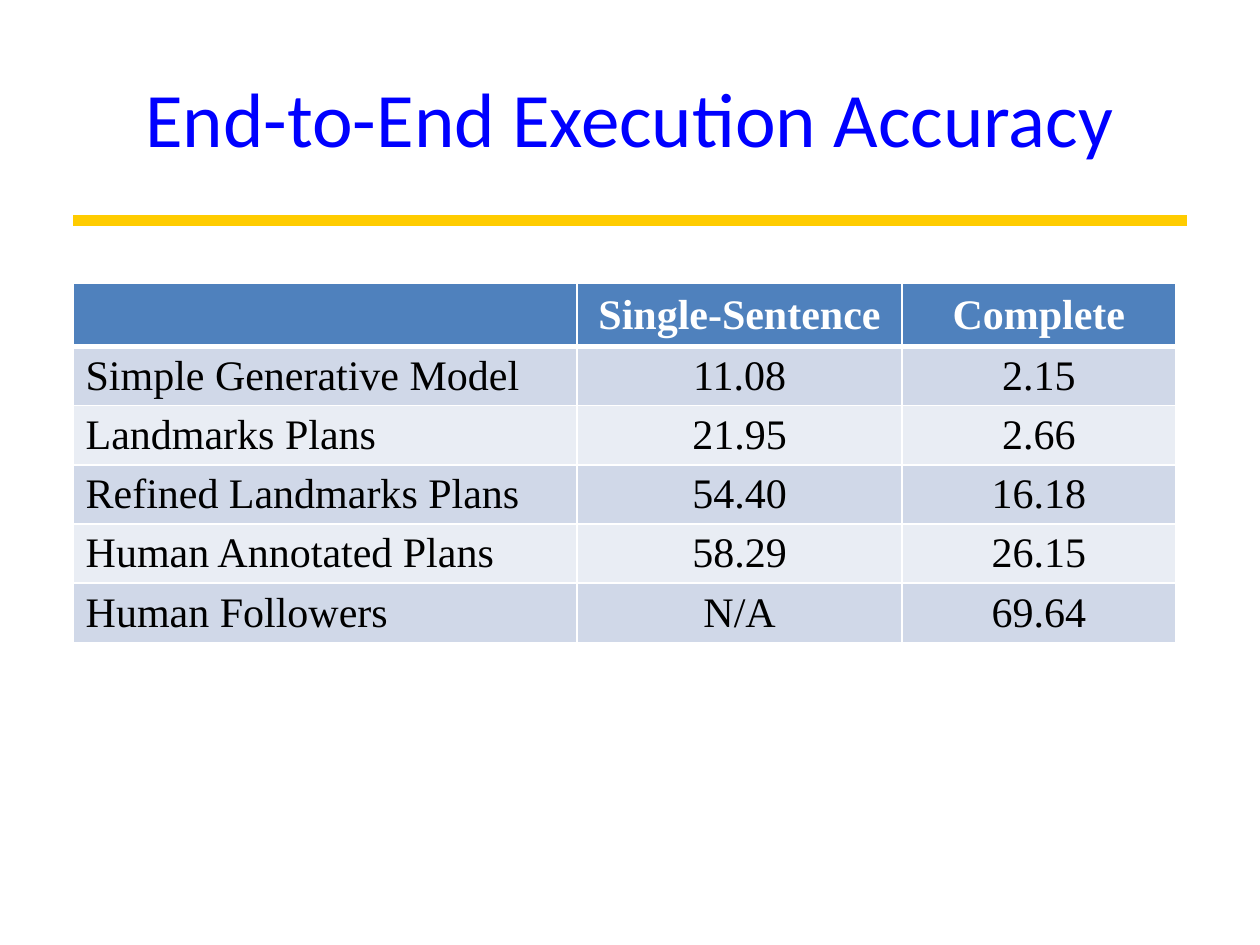
from pptx import Presentation
from pptx.dml.color import RGBColor
from pptx.enum.shapes import MSO_CONNECTOR
from pptx.enum.text import MSO_ANCHOR, PP_ALIGN
from pptx.oxml.ns import qn
from pptx.util import Inches, Pt
from lxml.etree import SubElement

TITLE = "End-to-End Execution Accuracy"
ROWS = [
    ("", "Single-Sentence", "Complete"),
    ("Simple Generative Model", "11.08", "2.15"),
    ("Landmarks Plans", "21.95", "2.66"),
    ("Refined Landmarks Plans", "54.40", "16.18"),
    ("Human Annotated Plans", "58.29", "26.15"),
    ("Human Followers", "N/A", "69.64"),
]
COLUMN_WIDTHS = (4, 2.58, 2.17)
HEADER_HEIGHT, ROW_HEIGHT = 0.5, 0.47
LEFT, RIGHT = 0.58, 9.42
COLORS = {
    "title": "0000FF", "rule": "FFCC00", "header": "4F81BD",
    "odd": "D0D8E8", "even": "E9EDF4", "white": "FFFFFF", "text": "000000",
}


def color(name):
    return RGBColor.from_string(COLORS[name])


def write(frame, text, *, size, font, fill, bold=False, align=PP_ALIGN.CENTER):
    paragraph = frame.paragraphs[0]
    paragraph.alignment = align
    span = paragraph.add_run()
    span.text = text
    span.font.size, span.font.name, span.font.bold = Pt(size), font, bold
    span.font.color.rgb = color(fill)


def set_borders(cell, widths):
    """Draw white borders; widths maps each side's tag to points."""
    properties = cell._tc.get_or_add_tcPr()
    for position, (side, width) in enumerate(widths.items()):
        line = properties.makeelement(qn(f"a:{side}"), {"w": str(Pt(width))})
        fill = SubElement(line, qn("a:solidFill"))
        SubElement(fill, qn("a:srgbClr"), val=COLORS["white"])
        properties.insert(position, line)


def add_title(page):
    box = page.shapes.title
    box.left, box.top = Inches(0.5), Inches(0.3)
    box.width, box.height = Inches(9), Inches(1.25)
    box.text_frame.vertical_anchor = MSO_ANCHOR.MIDDLE
    write(box.text_frame, TITLE, size=44, font="Calibri", fill="title")


def add_rule(page):
    rule = page.shapes.add_connector(
        MSO_CONNECTOR.STRAIGHT, Inches(LEFT), Inches(1.75), Inches(RIGHT), Inches(1.75))
    rule.line.color.rgb = color("rule")
    rule.line.width = Pt(6)
    SubElement(rule._element.spPr, qn("a:effectLst"))


def add_accuracy_table(page):
    heights = [HEADER_HEIGHT] + [ROW_HEIGHT] * (len(ROWS) - 1)
    table = page.shapes.add_table(
        len(ROWS), len(COLUMN_WIDTHS), Inches(LEFT), Inches(2.25),
        Inches(sum(COLUMN_WIDTHS)), Inches(sum(heights))).table
    for column, width in zip(table.columns, COLUMN_WIDTHS):
        column.width = Inches(width)
    for r, (values, height) in enumerate(zip(ROWS, heights)):
        table.rows[r].height = Inches(height)
        header = r == 0
        for c, value in enumerate(values):
            cell = table.cell(r, c)
            cell.margin_top = cell.margin_bottom = Inches(0.04)
            cell.vertical_anchor = MSO_ANCHOR.MIDDLE
            cell.fill.solid()
            cell.fill.fore_color.rgb = color("header" if header else "odd" if r % 2 else "even")
            set_borders(cell, {"lnL": 1, "lnR": 1, "lnT": 3 if r == 1 else 1,
                               "lnB": 3 if header else 1})
            if value:
                write(cell.text_frame, value, size=24, font="Times New Roman",
                      fill="white" if header else "text", bold=header,
                      align=PP_ALIGN.CENTER if c else PP_ALIGN.LEFT)


def main():
    deck = Presentation()
    deck.slide_width, deck.slide_height = Inches(10), Inches(7.5)
    page = deck.slides.add_slide(deck.slide_layouts[5])
    add_title(page)
    add_rule(page)
    add_accuracy_table(page)
    deck.save("out.pptx")


if __name__ == "__main__":
    main()
